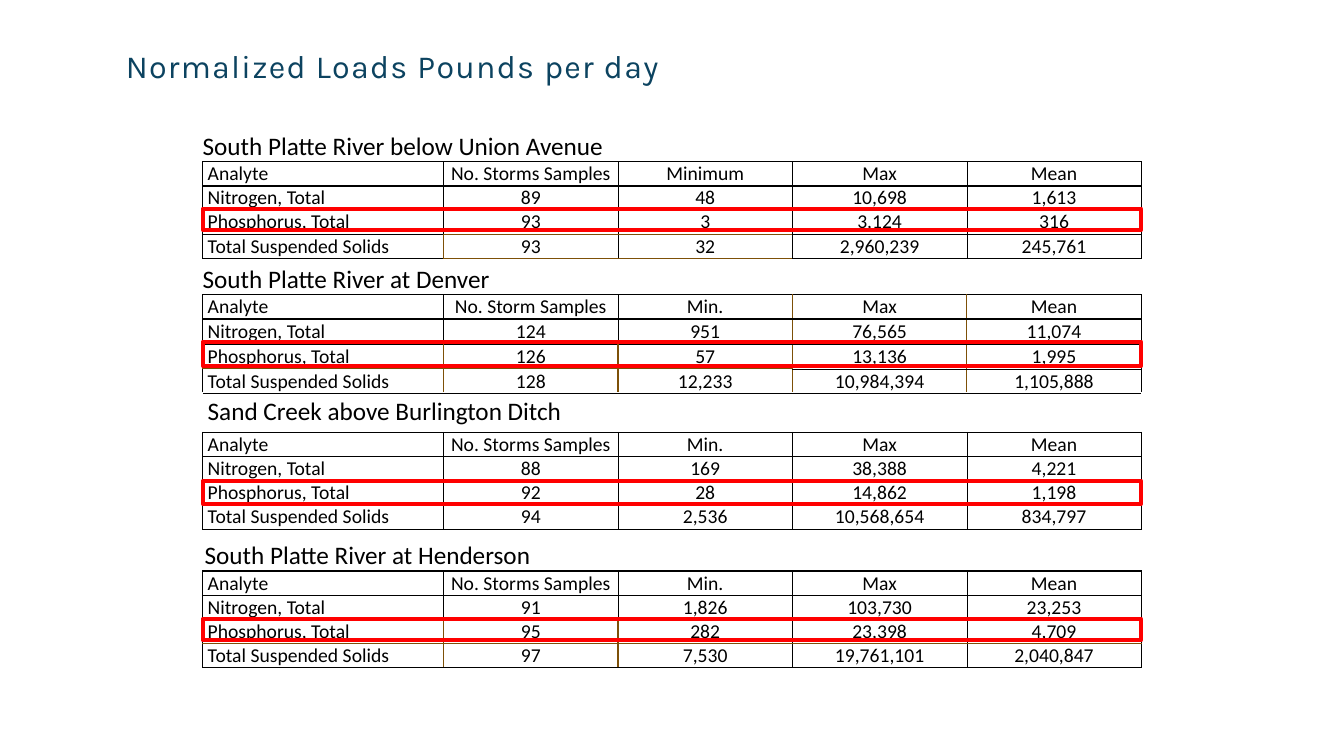
from dataclasses import dataclass, field

from lxml.etree import SubElement
from pptx import Presentation
from pptx.dml.color import RGBColor
from pptx.enum.shapes import MSO_SHAPE as Shape
from pptx.enum.text import MSO_ANCHOR as Anchor, MSO_AUTO_SIZE as AutoSize, PP_ALIGN as Align
from pptx.oxml.ns import qn
from pptx.util import Inches, Pt


@dataclass(frozen=True)
class Theme:
    heading: str = "0C4360"
    ink: str = "000000"
    accent: str = "7D5008"
    highlight: str = "FF0000"
    heading_font: str = "Karla"
    body_font: str = "Calibri"
    heading_size: float = 23
    site_size: float = 18
    cell_size: float = 14
    hairline: float = 0.5
    rule: float = 1
    frame: float = 2.75


@dataclass(frozen=True)
class Site:
    name: str
    top: float
    headers: tuple[str, ...]
    loads: tuple[tuple[str, ...], ...]
    frame_top: float
    frame_height: float
    name_height: float = 3
    name_span: int = 5
    name_inset: float = 0
    name_bottom: float = 0
    label_top: float = 0
    accent_right: set[tuple[int, int]] = field(default_factory=set)
    accent_below: set[tuple[int, int]] = field(default_factory=set)


THEME = Theme()
GRID_UNIT = Inches(0.1)
TABLE_LEFT, TABLE_WIDTH = 20.1, 93.1
COLUMNS = (23.9, 17.3, 17.3, 17.3, 17.3)
ROW_HEIGHT = 2.4
CELL_INSET = 0.5
ANALYTES = ("Nitrogen, Total", "Phosphorus, Total", "Total Suspended Solids")
LAST_ROW = len(ANALYTES) + 1

SITES = (
    Site("South Platte River below Union Avenue", 13,
         ("Analyte", "No. Storms Samples", "Minimum", "Max", "Mean"),
         (("89", "48", "10,698", "1,613"),
          ("93", "3", "3,124", "316"),
          ("93", "32", "2,960,239", "245,761")),
         20.7, 2.1, name_span=4,
         accent_right={(4, 0)},
         accent_below={(row, column) for row in (3, 4) for column in (1, 2)}),
    Site("South Platte River at Denver", 26.2,
         ("Analyte", "No. Storm Samples", "Min.", "Max", "Mean"),
         (("124", "951", "76,565", "11,074"),
          ("126", "57", "13,136", "1,995"),
          ("128", "12,233", "10,984,394", "1,105,888")),
         33.9, 2.4, label_top=0.1,
         accent_right={(row, column) for row in range(1, 5) for column in range(4)
                       if row > 2 or column > 1},
         accent_below={(3, column) for column in range(3)}),
    Site("Sand Creek above Burlington Ditch", 38.9,
         ("Analyte", "No. Storms Samples", "Min.", "Max", "Mean"),
         (("88", "169", "38,388", "4,221"),
          ("92", "28", "14,862", "1,198"),
          ("94", "2,536", "10,568,654", "834,797")),
         47.7, 2.3, name_height=4, name_inset=0.5, name_bottom=0.5),
    Site("South Platte River at Henderson", 53.6,
         ("Analyte", "No. Storms Samples", "Min.", "Max", "Mean"),
         (("91", "1,826", "103,730", "23,253"),
          ("95", "282", "23,398", "4,709"),
          ("97", "7,530", "19,761,101", "2,040,847")),
         61.4, 2.1, name_inset=0.2,
         accent_right={(row, column) for row in (3, 4) for column in (0, 1)},
         accent_below={(3, column) for column in range(5)}),
)


def units(count: float) -> int:
    return round(count * GRID_UNIT)


def place(item, left: float, top: float, width: float, height: float) -> None:
    item.left, item.top = units(left), units(top)
    item.width, item.height = units(width), units(height)


def write(para, text: str, size: float, font: str, color: str, align: Align) -> None:
    para.text = text
    para.alignment = align
    para.font.size = Pt(size)
    para.font.name = font
    para.font.bold = False
    para.font.color.rgb = RGBColor.from_string(color)


def add_heading(page) -> None:
    box = page.shapes.title
    place(box, 3.7, 4.1, 70.5, 7)
    frame = box.text_frame
    frame.auto_size = AutoSize.NONE
    frame.vertical_anchor = Anchor.TOP
    para = frame.paragraphs[0]
    write(para, "Normalized Loads Pounds per day", THEME.heading_size,
          THEME.heading_font, THEME.heading, Align.CENTER)
    para.runs[0].font._element.set("spc", "90")


def right_edge(site: Site, row: int, column: int) -> tuple[str, float]:
    if (row, column) in site.accent_right:
        return THEME.accent, THEME.rule
    return THEME.ink, THEME.rule if column < 0 else THEME.hairline


def lower_edge(site: Site, row: int, column: int) -> tuple[str, float]:
    if (row, column) in site.accent_below:
        return THEME.accent, THEME.rule
    return THEME.ink, THEME.rule if row in (0, 1, LAST_ROW) else THEME.hairline


def add_borders(cell, site: Site, row: int, column: int) -> None:
    edges = {"a:lnB": lower_edge(site, row, column)}
    if row:
        edges = {"a:lnL": right_edge(site, row, column - 1),
                 "a:lnR": right_edge(site, row, column),
                 "a:lnT": lower_edge(site, row - 1, column), **edges}
    properties = cell._tc.get_or_add_tcPr()
    for tag, (color, weight) in edges.items():
        line = SubElement(properties, qn(tag), w=str(Pt(weight)))
        fill = SubElement(line, qn("a:solidFill"))
        SubElement(fill, qn("a:srgbClr"), val=color)


def format_cell(cell, site: Site, row: int, column: int, text: str) -> None:
    inset = CELL_INSET if row else site.name_inset
    cell.margin_left = cell.margin_right = units(inset)
    cell.margin_top = units(site.label_top if row > 1 and column == 0 else 0)
    cell.margin_bottom = units(0 if row else site.name_bottom)
    cell.vertical_anchor = Anchor.MIDDLE if row > 1 else Anchor.BOTTOM
    add_borders(cell, site, row, column)
    cell.fill.background()
    write(cell.text_frame.paragraphs[0], text,
          THEME.cell_size if row else THEME.site_size, THEME.body_font, THEME.ink,
          Align.CENTER if row and column else Align.LEFT)


def add_site_table(page, site: Site) -> None:
    blanks = ("",) * (len(COLUMNS) - 1)
    body = tuple((analyte, *values) for analyte, values in zip(ANALYTES, site.loads))
    records = ((site.name, *blanks), site.headers, *body)
    heights = (site.name_height, *(ROW_HEIGHT,) * LAST_ROW)
    table = page.shapes.add_table(
        len(records), len(COLUMNS), units(TABLE_LEFT), units(site.top),
        units(TABLE_WIDTH), units(sum(heights))).table
    table.first_row = table.horz_banding = False
    for column, width in zip(table.columns, COLUMNS):
        column.width = units(width)
    for row, height in zip(table.rows, heights):
        row.height = units(height)
    for row, record in enumerate(records):
        for column, text in enumerate(record):
            format_cell(table.cell(row, column), site, row, column, text)
    table.cell(0, 0).merge(table.cell(0, site.name_span - 1))


def add_highlight(page, site: Site) -> None:
    box = page.shapes.add_shape(Shape.RECTANGLE, 0, 0, 0, 0)
    place(box, TABLE_LEFT, site.frame_top, TABLE_WIDTH, site.frame_height)
    box.shadow.inherit = False
    box.fill.background()
    box.line.color.rgb = RGBColor.from_string(THEME.highlight)
    box.line.width = Pt(THEME.frame)


def main() -> None:
    deck = Presentation()
    deck.slide_width, deck.slide_height = Inches(13.33), Inches(7.5)
    page = deck.slides.add_slide(deck.slide_layouts[5])
    add_heading(page)
    for site in SITES:
        add_site_table(page, site)
    for site in SITES:
        add_highlight(page, site)
    deck.save("out.pptx")


if __name__ == "__main__":
    main()
